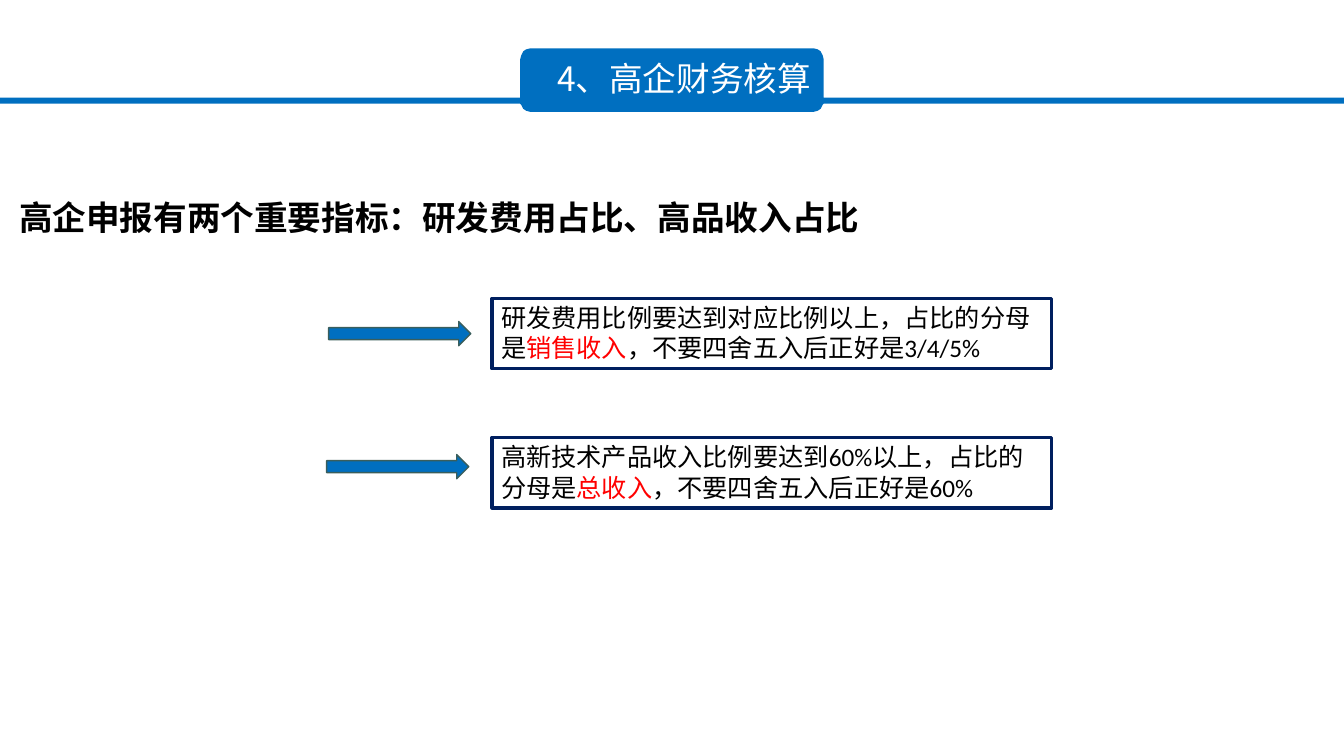
from dataclasses import dataclass

from lxml.etree import SubElement
from pptx import Presentation
from pptx.dml.color import RGBColor as RGB
from pptx.enum.shapes import MSO_SHAPE as SHAPE
from pptx.enum.text import MSO_ANCHOR as ANCHOR, MSO_AUTO_SIZE as AUTOSIZE, PP_ALIGN as ALIGN
from pptx.oxml.ns import qn
from pptx.util import Pt

PX = 9144
W, H = 1333, 750


@dataclass(frozen=True)
class Theme:
    blue: RGB = RGB(0x00, 0x6F, 0xC0)
    navy: RGB = RGB(0x00, 0x1F, 0x5F)
    edge: RGB = RGB(0x3A, 0x5E, 0x5C)
    red: RGB = RGB(0xFF, 0x00, 0x00)
    black: RGB = RGB(0x00, 0x00, 0x00)
    white: RGB = RGB(0xFF, 0xFF, 0xFF)
    cjk: str = "Noto Sans CJK SC"
    latin: str = "Calibri"
    head: int = 24
    body: int = 18
    leading: float = 1.22


class Deck:
    def __init__(self, theme):
        self.t = theme
        self.prs = Presentation()
        self.prs.slide_width, self.prs.slide_height = W * PX, H * PX
        self.s = self.prs.slides.add_slide(self.prs.slide_layouts[5])

    def fill_text(self, sp, runs, size, color, font, align=ALIGN.LEFT, bold=False,
                  insets=(0, 1, 0, 0), before=0):
        tf = sp.text_frame
        tf.word_wrap = True
        tf.auto_size = AUTOSIZE.NONE
        tf.vertical_anchor = ANCHOR.TOP
        tf.margin_left, tf.margin_top, tf.margin_right, tf.margin_bottom = (
            v * PX for v in insets)
        p = tf.paragraphs[0]
        p.alignment = align
        p.space_before = Pt(before)
        p.line_spacing = Pt(round(size * self.t.leading))
        p.font.size, p.font.bold, p.font.name = Pt(size), bold, font
        p.font.color.rgb = color
        SubElement(p._p.pPr.find(qn("a:defRPr")), qn("a:ea")).set("typeface", self.t.cjk)
        for text, kind in runs:
            r = p.add_run()
            r.text = text
            if kind == "key":
                r.font.color.rgb = self.t.red
            elif kind == "number":
                r.font.name = self.t.latin

    def shape(self, kind, x, y, w, h, fill, line, weight):
        sp = self.s.shapes.add_shape(kind, x * PX, y * PX, w * PX, h * PX)
        sp.shadow.inherit = False
        if fill is None:
            sp.fill.background()
        else:
            sp.fill.solid()
            sp.fill.fore_color.rgb = fill
        sp.line.color.rgb = line
        sp.line.width = Pt(weight)
        return sp

    def banner(self):
        top = [(0, 97), (516, 97), (516, 59), (517, 55), (519, 51), (522, 49), (526, 48)]
        bottom = [(526, 111), (522, 110), (519, 108), (517, 104), (516, 103), (0, 103)]

        def mirror(points):
            return [(W - x, y) for x, y in reversed(points)]

        outline = top + mirror(top) + mirror(bottom) + bottom
        fb = self.s.shapes.build_freeform(*outline[0], scale=PX)
        fb.add_line_segments(outline[1:], close=True)
        sp = fb.convert_to_shape()
        sp.shadow.inherit = False
        sp.fill.solid()
        sp.fill.fore_color.rgb = self.t.blue
        sp.line.fill.background()

    def title(self, text, x, y, w, h):
        sp = self.s.shapes.title
        sp.left, sp.top, sp.width, sp.height = x * PX, y * PX, w * PX, h * PX
        self.s.shapes._spTree.append(sp._element)
        self.fill_text(sp, [(text, "")], self.t.head, self.t.white, self.t.cjk,
                       align=ALIGN.CENTER, before=1)

    def heading(self, text, x, y, w, h):
        sp = self.s.shapes.add_textbox(x * PX, y * PX, w * PX, h * PX)
        self.fill_text(sp, [(text, "")], self.t.head, self.t.black, self.t.latin,
                       bold=True, insets=(10, 5, 10, 5))

    def arrow(self, x, y):
        self.shape(SHAPE.RIGHT_ARROW, x, y, 141, 24, self.t.blue, self.t.edge, 1)

    def note(self, y, runs):
        sp = self.shape(SHAPE.RECTANGLE, 488, y, 555, 70, None, self.t.navy, 2.25)
        self.fill_text(sp, runs, self.t.body, self.t.black, self.t.cjk,
                       insets=(9, 3, 20, 0), before=1)


def main():
    deck = Deck(Theme())
    deck.banner()
    deck.title("4、高企财务核算", 513, 56, 331, 42)
    deck.heading("高企申报有两个重要指标：研发费用占比、高品收入占比", 9, 190, 992, 68)
    indicators = [
        (326, 319, 296, [("研发费用比例要达到对应比例以上，占比的分母 是", ""),
                         ("销售收入", "key"),
                         ("，不要四舍五入后正好是", ""),
                         ("3/4/5%", "number")]),
        (324, 451, 434, [("高新技术产品收入比例要达到", ""),
                         ("60%", "number"),
                         ("以上，占比的 分母是", ""),
                         ("总收入", "key"),
                         ("，不要四舍五入后正好是", ""),
                         ("60%", "number")]),
    ]
    for arrow_x, arrow_y, note_y, runs in indicators:
        deck.arrow(arrow_x, arrow_y)
        deck.note(note_y, runs)
    deck.prs.save("out.pptx")


if __name__ == "__main__":
    main()
